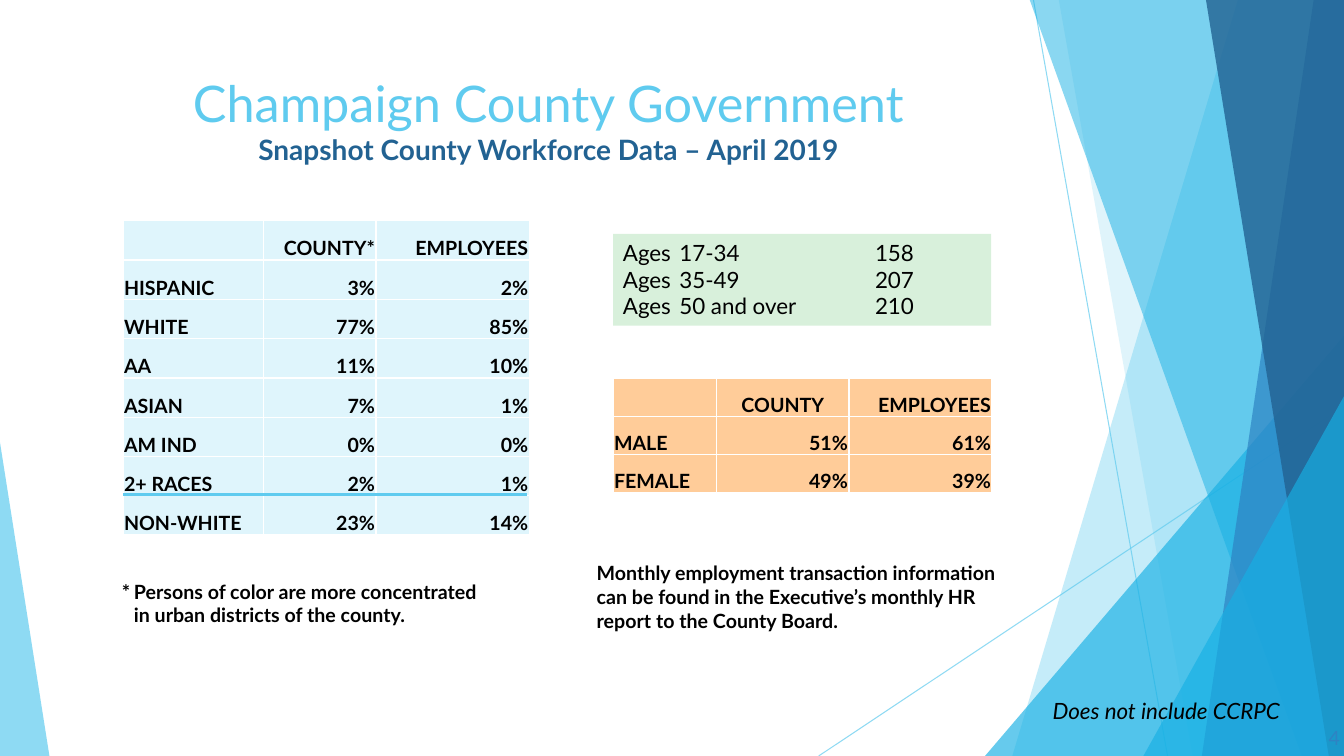
from lxml import etree
from pptx import Presentation
from pptx import util as u
from pptx.dml.color import RGBColor
from pptx.enum import shapes, text
from pptx.oxml.ns import qn

COLORS = {
    "sky": "5FCBEF", "cyan": "17B0E4", "blue": "2E83C3", "navy": "226292",
    "black": "000000", "white": "FFFFFF",
    "race": "DFF5FC", "ages": "D8F0DB", "gender": "FFCC99",
}
FONT = "Lato"
WIDTH, HEIGHT, TOP = 13.33, 7.5, -0.01
LEFT, CENTER, RIGHT = text.PP_ALIGN.LEFT, text.PP_ALIGN.CENTER, text.PP_ALIGN.RIGHT

RACE_ROWS = [
    ("", "COUNTY*", "EMPLOYEES"),
    ("HISPANIC", "3%", "2%"),
    ("WHITE", "77%", "85%"),
    ("AA", "11%", "10%"),
    ("ASIAN", "7%", "1%"),
    ("AM IND", "0%", "0%"),
    ("2+ RACES", "2%", "1%"),
    ("NON-WHITE", "23%", "14%"),
]
GENDER_ROWS = [
    ("", "COUNTY", "EMPLOYEES"),
    ("MALE", "51%", "61%"),
    ("FEMALE", "49%", "39%"),
]
AGE_GROUPS = [("17-34", 158), ("35-49", 207), ("50 and over", 210)]


def rgb(name):
    return RGBColor.from_string(COLORS[name])


def set_alpha(properties, percent):
    """Make the first colour inside the given XML properties transparent."""
    color = next(properties.iter(qn("a:srgbClr")))
    etree.SubElement(color, qn("a:alpha")).set("val", str(percent * 1000))


def paint(shape, color, opacity=100):
    shape.shadow.inherit = False
    shape.fill.solid()
    shape.fill.fore_color.rgb = rgb(color)
    shape.line.fill.background()
    if opacity < 100:
        set_alpha(shape.fill._xPr, opacity)


def add_band(slide, points, color, opacity):
    corners = [(u.Inches(x), u.Inches(y)) for x, y in points]
    builder = slide.shapes.build_freeform(*corners[0])
    builder.add_line_segments(corners[1:], close=True)
    paint(builder.convert_to_shape(), color, opacity)


def add_triangle(slide, box, apex, color, opacity):
    triangle = slide.shapes.add_shape(
        shapes.MSO_SHAPE.ISOSCELES_TRIANGLE, *map(u.Inches, box))
    triangle.adjustments[0] = apex
    paint(triangle, color, opacity)


def add_line(slide, start, end, weight, opacity=100):
    line = slide.shapes.add_connector(
        shapes.MSO_CONNECTOR.STRAIGHT, *map(u.Inches, start + end))
    line.line.color.rgb = rgb("sky")
    line.line.width = u.Pt(weight)
    if opacity < 100:
        set_alpha(line.line._ln, opacity)
    etree.SubElement(line._element.spPr, qn("a:effectLst"))


def add_run(paragraph, words, size, color="black", bold=False, italic=False):
    run = paragraph.add_run()
    run.text = words
    font = run.font
    font.name, font.size = FONT, u.Pt(size)
    font.bold, font.italic = bold, italic
    font.color.rgb = rgb(color)


def set_tabs(paragraph, stops):
    tab_list = etree.SubElement(paragraph._p.get_or_add_pPr(), qn("a:tabLst"))
    for stop in stops:
        tab = etree.SubElement(tab_list, qn("a:tab"))
        tab.set("pos", str(u.Inches(stop)))
        tab.set("algn", "l")


def add_text(slide, box, lines, size, tabs=(), fill=None, align=LEFT, **style):
    block = slide.shapes.add_textbox(*map(u.Inches, box))
    if fill:
        paint(block, fill)
    frame = block.text_frame
    frame.word_wrap = True
    for index, words in enumerate(lines):
        paragraph = frame.add_paragraph() if index else frame.paragraphs[0]
        paragraph.alignment = align
        if tabs:
            set_tabs(paragraph, tabs)
        add_run(paragraph, words, size, **style)
    return frame


def border_cell(cell):
    properties = cell._tc.get_or_add_tcPr()
    for side in ("lnL", "lnR", "lnT", "lnB"):
        edge = etree.SubElement(properties, qn(f"a:{side}"), w=str(u.Pt(1)))
        solid = etree.SubElement(edge, qn("a:solidFill"))
        etree.SubElement(solid, qn("a:srgbClr"), val=COLORS["white"])


def add_table(slide, left, top, widths, row_height, rows, fill, county_head):
    table = slide.shapes.add_table(
        len(rows), len(widths), u.Inches(left), u.Inches(top),
        u.Inches(sum(widths)), u.Inches(row_height * len(rows))).table
    for column, width in zip(table.columns, widths):
        column.width = u.Inches(width)
    for r, row in enumerate(rows):
        table.rows[r].height = u.Inches(row_height)
        for c, words in enumerate(row):
            cell = table.cell(r, c)
            border_cell(cell)
            cell.fill.solid()
            cell.fill.fore_color.rgb = rgb(fill)
            cell.vertical_anchor = text.MSO_ANCHOR.BOTTOM
            cell.margin_left = cell.margin_right = cell.margin_top = u.Inches(0.01)
            cell.margin_bottom = 0
            if words:
                paragraph = cell.text_frame.paragraphs[0]
                paragraph.alignment = RIGHT if c else LEFT
                add_run(paragraph, words, 14, bold=True)
    table.cell(0, 1).text_frame.paragraphs[0].alignment = county_head


def add_backdrop(slide):
    add_line(slide, (10.25, 0), (11.58, HEIGHT), 0.75, 70)
    add_line(slide, (WIDTH, 4.03), (8.12, HEIGHT), 0.75, 70)

    def edge_band(top_x, bottom_x, color, opacity):
        add_band(slide, [(top_x, TOP), (WIDTH, TOP), (WIDTH, HEIGHT),
                         (bottom_x, HEIGHT)], color, opacity)

    edge_band(12.28, 10.04, "sky", 36)
    edge_band(10.5, 11.83, "sky", 20)
    add_triangle(slide, (9.77, 3.33, 3.56, 4.17), 1, "cyan", 66)
    edge_band(10.21, 12.91, "cyan", 50)
    edge_band(13.03, 11.92, "blue", 70)
    edge_band(11.96, 13.18, "navy", 80)
    add_triangle(slide, (11.34, 3.93, 1.99, 3.57), 1, "cyan", 66)
    add_triangle(slide, (0, 4.39, 0.49, 3.11), 0, "sky", 70)


def main():
    deck = Presentation()
    deck.slide_width, deck.slide_height = u.Inches(WIDTH), u.Inches(HEIGHT)
    slide = deck.slides.add_slide(deck.slide_layouts[6])
    add_backdrop(slide)

    # Title and subtitle share one paragraph
    title = add_text(slide, (0.74, 0.67, 9.4, 1.44), ["Champaign County Government"],
                     36, align=CENTER, color="sky").paragraphs[0]
    title.add_line_break()
    add_run(title, "Snapshot County Workforce Data – April 2019", 20, "navy", bold=True)

    # Race table with the rule above its total, and its footnote
    add_table(slide, 1.22, 2.19, (1.39, 1.12, 1.52), 0.39, RACE_ROWS, "race", RIGHT)
    add_line(slide, (1.22, 4.91), (5.23, 4.91), 2.25)
    add_text(slide, (1.11, 5.7, 4.14, 0.57),
             ["*\tPersons of color are more concentrated",
              "\tin urban districts of the county."], 14, tabs=(0.12,), bold=True)

    # Ages, gender table and report note
    add_text(slide, (6.08, 2.32, 3.75, 0.91),
             [f"Ages \t{ages}\t\t{count}" for ages, count in AGE_GROUPS],
             16, tabs=(0.56, 2, 2.5), fill="ages")
    add_table(slide, 6.08, 3.75, (1.03, 1.31, 1.42), 0.38, GENDER_ROWS, "gender", CENTER)
    add_text(slide, (5.82, 5.52, 4.37, 0.81),
             ["Monthly employment transaction information can be found in the "
              "Executive’s monthly HR report to the County Board."], 14, bold=True)

    # Exclusion note and page number
    exclusion = add_text(slide, (10.19, 6.87, 2.87, 0.37),
                         ["Does not include CCRPC"], 16, italic=True)
    exclusion.margin_left = u.Inches(0.25)
    page = add_text(slide, (12.73, 7.15, 0.6, 0.33), ["4"], 14, align=RIGHT, color="blue")
    page.margin_right = u.Inches(0.04)

    deck.save("out.pptx")


if __name__ == "__main__":
    main()
